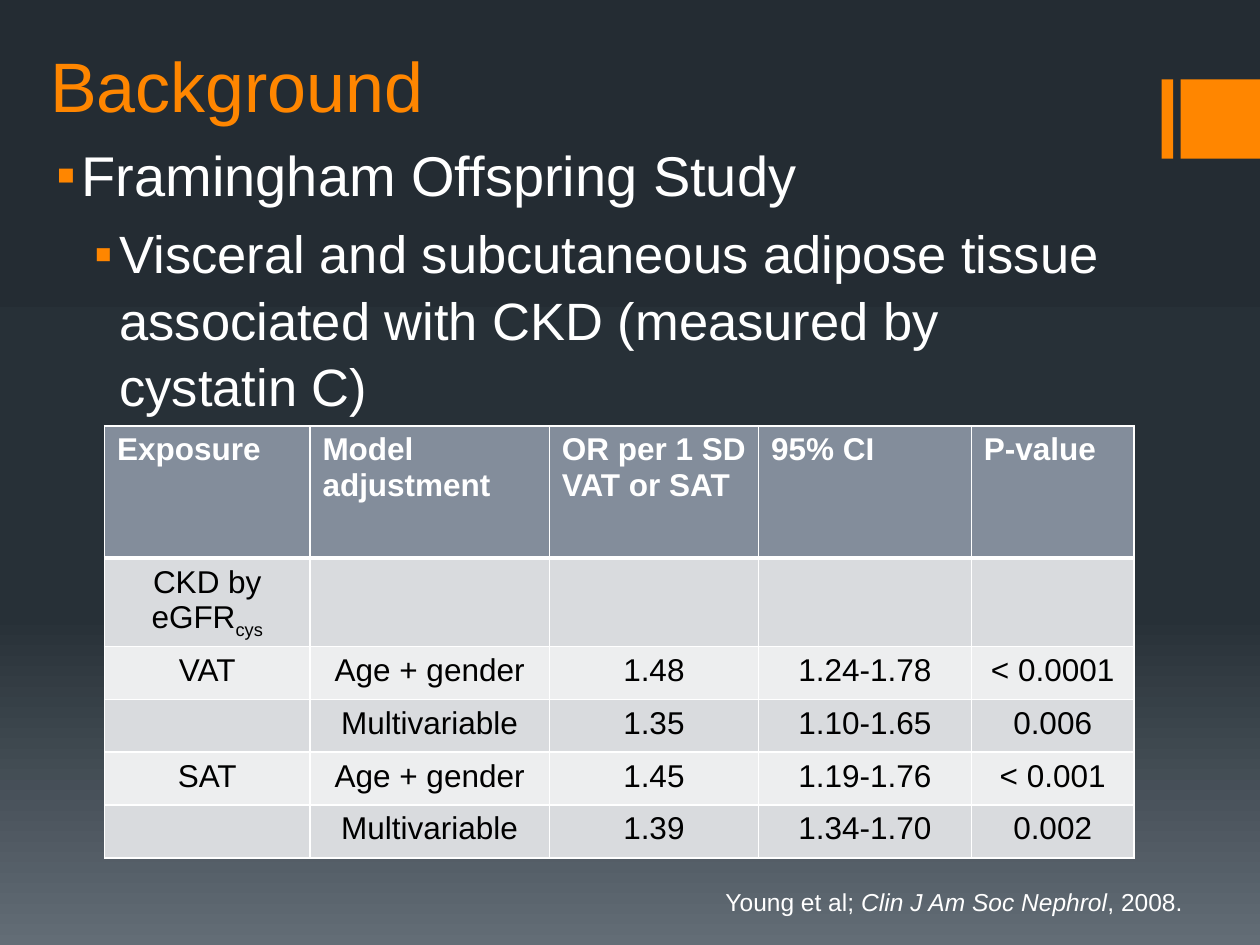
"""Build a slide on adipose tissue and kidney disease."""
from copy import deepcopy

from lxml import etree
from pptx import Presentation
from pptx.dml.color import RGBColor
from pptx.enum import shapes, text
from pptx.oxml import ns
from pptx.util import Inches, Pt

COLORS = {
    "orange": "FF8600", "white": "FFFFFF", "black": "000000",
    "header": "838D9B", "dark_row": "D9DBDE", "light_row": "EDEEEF",
}
BACKGROUND = [(0, "242C33"), (0.65, "273037"), (1, "636D76")]
COLUMN_WIDTHS = [1.63, 1.9, 1.66, 1.69, 1.29]
ROW_HEIGHTS = [1.05, 0.69] + [0.42] * 4
ROWS = [
    ["Exposure", "Model adjustment", "OR per 1 SD VAT or SAT", "95% CI", "P-value"],
    ["CKD by eGFR", "", "", "", ""],
    ["VAT", "Age + gender", "1.48", "1.24-1.78", "< 0.0001"],
    ["", "Multivariable", "1.35", "1.10-1.65", "0.006"],
    ["SAT", "Age + gender", "1.45", "1.19-1.76", "< 0.001"],
    ["", "Multivariable", "1.39", "1.34-1.70", "0.002"],
]


def rgb(name):
    """Return the named colour."""
    return RGBColor.from_string(COLORS[name])


def add_run(p, content, size=18, color="white", bold=False, italic=False, baseline=None):
    """Append a formatted run to a paragraph."""
    r = p.add_run()
    r.text = content
    r.font.name = "Arial"
    r.font.size = Pt(size)
    r.font.bold = bold
    r.font.italic = italic
    r.font.color.rgb = rgb(color)
    if baseline is not None:
        r.font._element.set("baseline", str(baseline * 1000))
    return r


def add_box(s, box, anchor=text.MSO_ANCHOR.TOP):
    """Add a wrapping text box and return its text frame."""
    tf = s.shapes.add_textbox(*map(Inches, box)).text_frame
    tf.word_wrap = True
    tf.vertical_anchor = anchor
    return tf


def paint_background(s):
    """Fill the slide with a vertical gradient of three stops."""
    fill = s.background.fill
    fill.gradient()
    fill.gradient_angle = 270
    stop_list = s.element.find(".//" + ns.qn("a:gsLst"))
    stop_list.append(deepcopy(stop_list[-1]))
    for stop, (position, color) in zip(fill.gradient_stops, BACKGROUND):
        stop.position = position
        stop.color.rgb = RGBColor.from_string(color)


def add_accent(s, box):
    """Place a narrow bar and a square that end at the box's right edge."""
    left, top, width, height = box
    for x, w in ((left, 0.09), (left + width - height, height)):
        sp = s.shapes.add_shape(
            shapes.MSO_SHAPE.RECTANGLE, *map(Inches, (x, top, w, height)))
        sp.shadow.inherit = False
        sp.fill.solid()
        sp.fill.fore_color.rgb = rgb("orange")
        sp.line.fill.background()


def add_title(s, box):
    """Place the slide title."""
    tf = add_box(s, box, text.MSO_ANCHOR.MIDDLE)
    add_run(tf.paragraphs[0], "Background", size=40, color="orange")


def add_bullet(p, indent, hanging=0.2):
    """Give a paragraph a square orange bullet with a hanging indent."""
    pPr = p._p.get_or_add_pPr()
    pPr.set("marL", str(Inches(indent)))
    pPr.set("indent", str(-Inches(hanging)))
    color = etree.SubElement(pPr, ns.qn("a:buClr"))
    etree.SubElement(color, ns.qn("a:srgbClr"), val=COLORS["orange"])
    etree.SubElement(pPr, ns.qn("a:buFont"), typeface="Arial")
    etree.SubElement(pPr, ns.qn("a:buChar"), char="▪")


def add_body(s, box):
    """Place the two bullet levels."""
    tf = add_box(s, box)
    points = [
        ("Framingham Offspring Study", 32, 0.25),
        ("Visceral and subcutaneous adipose tissue associated with CKD "
         "(measured by cystatin C)", 30, 0.55),
    ]
    for level, (content, size, indent) in enumerate(points):
        p = tf.add_paragraph() if level else tf.paragraphs[0]
        p.level = level
        p.line_spacing = 1.05
        p.space_before = Pt(size * 0.2)
        add_bullet(p, indent)
        add_run(p, content, size=size)


def set_borders(cell, top=1, bottom=1):
    """Draw white borders of the given widths in points around a cell."""
    tcPr = cell._tc.get_or_add_tcPr()
    sides = {"lnL": 1, "lnR": 1, "lnT": top, "lnB": bottom}
    for i, (side, width) in enumerate(sides.items()):
        ln = etree.Element(ns.qn("a:" + side), w=str(Pt(width)))
        fill = etree.SubElement(ln, ns.qn("a:solidFill"))
        etree.SubElement(fill, ns.qn("a:srgbClr"), val=COLORS["white"])
        tcPr.insert(i, ln)


def add_results(s, box):
    """Place the table of odds ratios."""
    table = s.shapes.add_table(
        len(ROWS), len(COLUMN_WIDTHS), *map(Inches, box)).table
    for column, width in zip(table.columns, COLUMN_WIDTHS):
        column.width = Inches(width)
    for i, (row, height, values) in enumerate(zip(table.rows, ROW_HEIGHTS, ROWS)):
        row.height = Inches(height)
        header = i == 0
        shade = "header" if header else "dark_row" if i % 2 else "light_row"
        for cell, value in zip(row.cells, values):
            cell.fill.solid()
            cell.fill.fore_color.rgb = rgb(shade)
            set_borders(cell, top=3 if i == 1 else 1, bottom=3 if header else 1)
            p = cell.text_frame.paragraphs[0]
            if not header:
                p.alignment = text.PP_ALIGN.CENTER
            if value:
                add_run(p, value, color="white" if header else "black", bold=header)
    add_run(table.cell(1, 0).text_frame.paragraphs[0], "cys",
            color="black", baseline=-25)


def add_citation(s, box):
    """Place the literature reference."""
    p = add_box(s, box).paragraphs[0]
    add_run(p, "Young et al; ", size=14)
    add_run(p, "Clin J Am Soc Nephrol", size=14, italic=True)
    add_run(p, ", 2008.", size=14)


def main():
    """Build and save the presentation."""
    prs = Presentation()
    prs.slide_width, prs.slide_height = Inches(10), Inches(7.5)
    s = prs.slides.add_slide(prs.slide_layouts[6])
    paint_background(s)
    add_accent(s, (9.22, 0.63, 0.78, 0.63))
    add_results(s, (0.83, 3.38, 8.17, 3.44))
    add_title(s, (0.3, 0.28, 8.7, 0.78))
    add_body(s, (0.3, 1.04, 8.7, 5.25))
    add_citation(s, (5.66, 6.99, 4.17, 0.34))
    prs.save("out.pptx")


if __name__ == "__main__":
    main()
